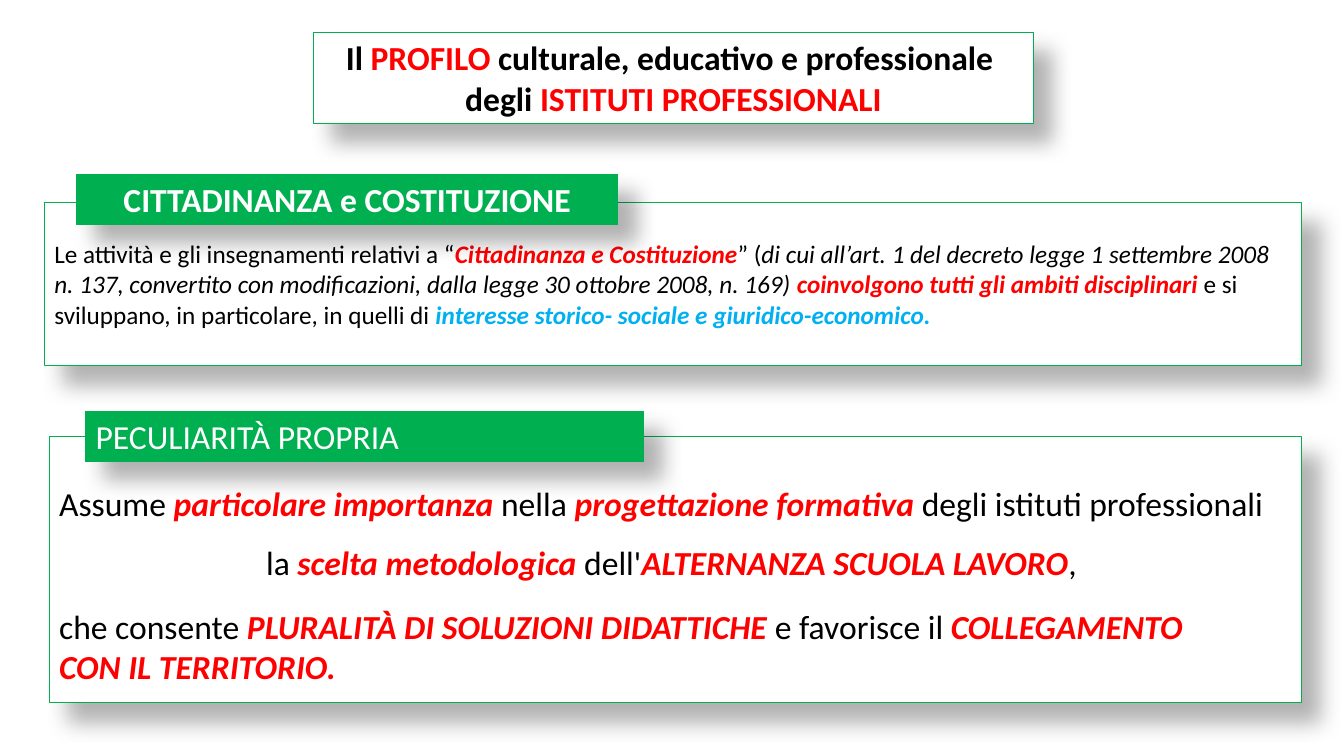
from lxml.etree import SubElement
from pptx import Presentation
from pptx.dml.color import RGBColor
from pptx.enum.shapes import MSO_SHAPE
from pptx.enum.text import MSO_ANCHOR, MSO_AUTO_SIZE, PP_ALIGN
from pptx.oxml.ns import qn
from pptx.util import Cm, Pt

COLORS = {
    "black": "000000",
    "white": "FFFFFF",
    "red": "FF0000",
    "green": "00B050",
    "blue": "00B0F0",
}
# Run styles: colour, bold, italic
STYLES = {
    "plain": ("black", False, False),
    "italic": ("black", False, True),
    "bold": ("black", True, False),
    "key": ("red", True, False),
    "strong": ("red", True, True),
    "area": ("blue", True, True),
    "label": ("white", False, False),
    "bold label": ("white", True, False),
}
LEFT, CENTER = PP_ALIGN.LEFT, PP_ALIGN.CENTER


def style_box(box, place, fill, top_inset=0.13, anchor=MSO_ANCHOR.TOP):
    """Place a box and give it a green outline and a soft shadow."""
    box.left, box.top, box.width, box.height = [Cm(length) for length in place]
    box.fill.solid()
    box.fill.fore_color.rgb = RGBColor.from_string(COLORS[fill])
    box.line.color.rgb = RGBColor.from_string(COLORS["green"])
    box.line.width = Pt(0.75)
    box.shadow.inherit = False
    effects = box._element.spPr.find(qn("a:effectLst"))
    shadow = SubElement(effects, qn("a:outerShdw"), blurRad=str(Pt(15)), dist=str(Pt(18)),
                        dir=str(45 * 60000), algn="tl", rotWithShape="0")
    tint = SubElement(shadow, qn("a:srgbClr"), val=COLORS["black"])
    SubElement(tint, qn("a:alpha"), val="30000")
    frame = box.text_frame
    frame.word_wrap = True
    frame.auto_size = MSO_AUTO_SIZE.NONE
    frame.vertical_anchor = anchor
    frame.margin_left = frame.margin_right = Cm(0.25)
    frame.margin_top, frame.margin_bottom = Cm(top_inset), Cm(0.13)


def write(box, size, paragraphs):
    """Fill a box with paragraphs of (alignment, space before, runs)."""
    frame = box.text_frame
    for index, (alignment, gap, pieces) in enumerate(paragraphs):
        paragraph = frame.add_paragraph() if index else frame.paragraphs[0]
        paragraph.alignment = alignment
        paragraph.space_before = Pt(gap)
        for text, style in pieces:
            run = paragraph.add_run()
            run.text = text
            color, run.font.bold, run.font.italic = STYLES[style]
            run.font.name = "Calibri"
            run.font.size = Pt(size)
            run.font.color.rgb = RGBColor.from_string(COLORS[color])


prs = Presentation()
prs.slide_width, prs.slide_height = Cm(33.87), Cm(19.05)
slide = prs.slides.add_slide(prs.slide_layouts[5])

# Title
title = slide.shapes.title
style_box(title, (7.9, 0.81, 18.14, 2.31), "white")
write(title, 24, [
    (CENTER, 0, [("Il ", "bold"), ("PROFILO ", "key"),
                 ("culturale, educativo e professionale ", "bold")]),
    (CENTER, 0, [("degli ", "bold"), ("ISTITUTI PROFESSIONALI", "key")]),
])

# Wording of the two sections
citizenship = [
    (LEFT, 0, [
        ("Le attività e gli insegnamenti relativi a “", "plain"),
        ("Cittadinanza e Costituzione", "strong"),
        ("” (", "plain"),
        ("di cui all’art. 1 del decreto legge 1 settembre 2008 n. 137, convertito con "
         "modificazioni, dalla legge 30 ottobre 2008, n. 169) ", "italic"),
        ("coinvolgono tutti gli ambiti disciplinari", "strong"),
        (" e si sviluppano, in particolare, in quelli di ", "plain"),
        ("interesse storico- sociale e giuridico-economico.", "area"),
    ]),
]
peculiarity = [
    (LEFT, 0, [
        ("Assume ", "plain"), ("particolare importanza ", "strong"),
        ("nella ", "plain"), ("progettazione formativa ", "strong"),
        ("degli istituti professionali", "plain"),
    ]),
    (CENTER, 13.4, [
        ("la ", "plain"), ("scelta metodologica ", "strong"),
        ("dell'", "plain"), ("ALTERNANZA SCUOLA LAVORO", "strong"), (", ", "plain"),
    ]),
    (LEFT, 17, [
        ("che consente ", "plain"), ("PLURALITÀ DI SOLUZIONI DIDATTICHE ", "strong"),
        ("e favorisce il ", "plain"), ("COLLEGAMENTO", "strong"),
    ]),
    (LEFT, 0, [("CON IL TERRITORIO.", "strong")]),
]

# Sections: body place, top inset, text size, body, heading place, heading
sections = [
    ((1.12, 5.11, 31.67, 4.11), 0.9, 18, citizenship, (1.93, 4.39, 13.64, 1.27),
     (CENTER, 0, [("CITTADINANZA e COSTITUZIONE", "bold label")])),
    ((1.24, 11, 31.55, 6.71), 1.16, 24, peculiarity, (2.16, 10.36, 14.07, 1.27),
     (LEFT, 0, [("PECULIARITÀ PROPRIA", "label")])),
]
for body_place, inset, size, wording, heading_place, heading_text in sections:
    body = slide.shapes.add_shape(MSO_SHAPE.RECTANGLE, 0, 0, 0, 0)
    style_box(body, body_place, "white", top_inset=inset)
    write(body, size, wording)
    heading = slide.shapes.add_shape(MSO_SHAPE.RECTANGLE, 0, 0, 0, 0)
    style_box(heading, heading_place, "green", anchor=MSO_ANCHOR.MIDDLE)
    write(heading, 24, [heading_text])

prs.save("out.pptx")
